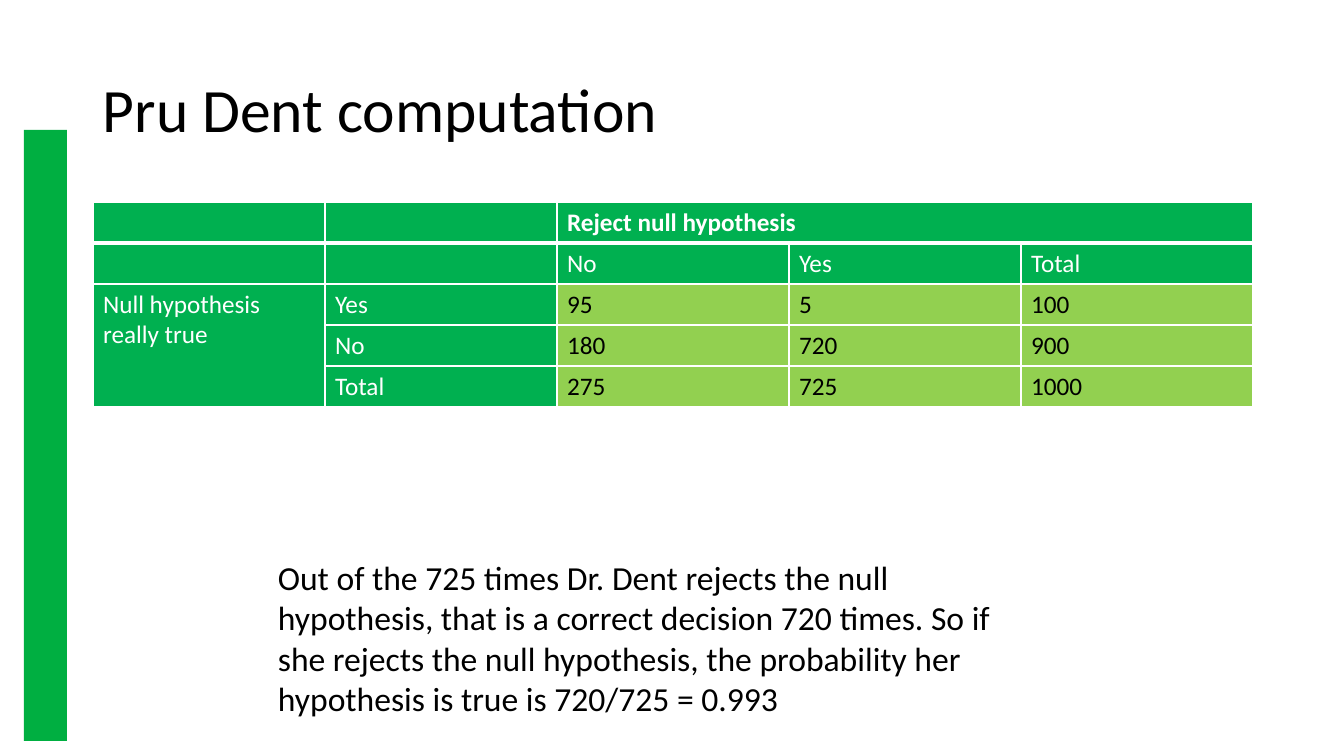
from lxml import etree
from pptx import Presentation
from pptx.dml.color import RGBColor
from pptx.enum.shapes import MSO_SHAPE
from pptx.enum.text import MSO_ANCHOR, PP_ALIGN
from pptx.oxml.ns import qn
from pptx.util import Pt

RECTANGLE = MSO_SHAPE.RECTANGLE
MIDDLE = MSO_ANCHOR.MIDDLE
LEFT = PP_ALIGN.LEFT

TITLE = "Pru Dent computation"
DECISIONS = [
    ["", "", "Reject null hypothesis", "", ""],
    ["", "", "No", "Yes", "Total"],
    ["Null hypothesis really true", "Yes", "95", "5", "100"],
    ["", "No", "180", "720", "900"],
    ["", "Total", "275", "725", "1000"],
]
MERGES = [((0, 2), (0, 4)), ((2, 0), (4, 0))]
HEADINGS = 2  # heading rows at the top and heading columns at the left
CONCLUSION = (
    "Out of the 725 times Dr. Dent rejects the null hypothesis, that is a "
    "correct decision 720 times. So if she rejects the null hypothesis, the "
    "probability her hypothesis is true is 720/725 = 0.993"
)

FONT = "Calibri"
BLACK, WHITE = "000000", "FFFFFF"
BAR_GREEN, HEADING_GREEN, VALUE_GREEN = "00AF41", "00B050", "92D050"

EMU_PER_PX = 914400 / 100.8
COLUMN_WIDTH, ROW_HEIGHT = 232, 41
BAR_BOX = (24, 130, 43, 611)
TITLE_BOX = (93, 40, 1159, 146)
TABLE_CORNER = (93, 202)
CONCLUSION_BOX = (268, 551, 768, 173)


def px(length):
    return round(length * EMU_PER_PX)


def box(lengths):
    return [px(length) for length in lengths]


def paint(fill, color):
    fill.solid()
    fill.fore_color.rgb = RGBColor.from_string(color)


def write(frame, text, size, color, bold=False):
    frame.word_wrap = True
    paragraph = frame.paragraphs[0]
    paragraph.text = text
    paragraph.alignment = LEFT
    font = paragraph.font
    font.name, font.size, font.bold = FONT, Pt(size), bold
    font.color.rgb = RGBColor.from_string(color)
    return paragraph


def add_rectangle(slide, lengths, color):
    rectangle = slide.shapes.add_shape(RECTANGLE, *box(lengths))
    rectangle.shadow.inherit = False
    paint(rectangle.fill, color)
    rectangle.line.fill.background()
    return rectangle


def add_borders(cell, widths):
    """Draw white borders; widths maps a side's tag to points."""
    properties = cell._tc.get_or_add_tcPr()
    for position, (side, width) in enumerate(widths.items()):
        line = etree.Element(qn(f"a:{side}"), w=str(Pt(width)))
        solid = etree.SubElement(line, qn("a:solidFill"))
        etree.SubElement(solid, qn("a:srgbClr"), val=WHITE)
        properties.insert(position, line)


def add_decision_table(slide):
    rows, columns = len(DECISIONS), len(DECISIONS[0])
    size = (columns * COLUMN_WIDTH, rows * ROW_HEIGHT)
    table = slide.shapes.add_table(rows, columns, *box(TABLE_CORNER + size)).table
    for r, labels in enumerate(DECISIONS):
        for c, label in enumerate(labels):
            cell = table.cell(r, c)
            heading = r < HEADINGS or c < HEADINGS
            paint(cell.fill, HEADING_GREEN if heading else VALUE_GREEN)
            write(cell.text_frame, label, 18, WHITE if heading else BLACK, r == 0)
            add_borders(cell, {"lnL": 1, "lnR": 1,
                               "lnT": 3 if r == 1 else 1,
                               "lnB": 3 if r == 0 else 1})
    for first, last in MERGES:
        table.cell(*first).merge(table.cell(*last))


def main():
    deck = Presentation()
    deck.slide_width, deck.slide_height = px(1344), px(756)
    slide = deck.slides.add_slide(deck.slide_layouts[6])

    add_rectangle(slide, BAR_BOX, BAR_GREEN)

    title = slide.shapes.add_textbox(*box(TITLE_BOX)).text_frame
    title.vertical_anchor = MIDDLE
    write(title, TITLE, 44, BLACK).line_spacing = 0.9

    add_decision_table(slide)

    conclusion = add_rectangle(slide, CONCLUSION_BOX, WHITE).text_frame
    conclusion.vertical_anchor = MIDDLE
    write(conclusion, CONCLUSION, 24, BLACK)

    deck.save("out.pptx")


if __name__ == "__main__":
    main()
